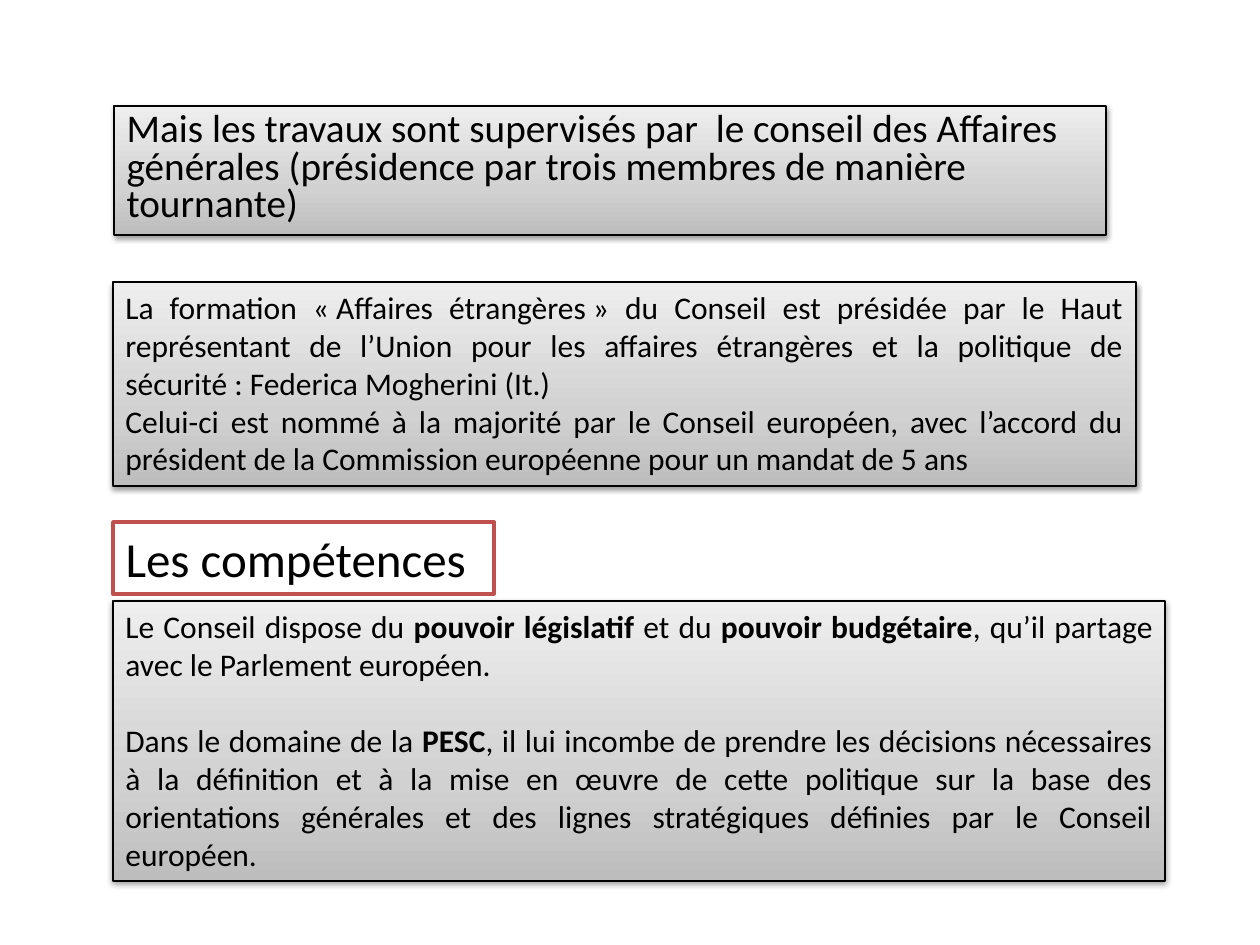
from dataclasses import dataclass

import lxml.etree
import pptx
import pptx.dml.color
import pptx.enum.shapes
import pptx.enum.text
import pptx.oxml.ns
import pptx.util

PX = 914400 / 126
RGB = pptx.dml.color.RGBColor.from_string
ALIGN = pptx.enum.text.PP_ALIGN
qn = pptx.oxml.ns.qn


@dataclass(frozen=True)
class Theme:
    font: str = "Calibri"
    ink: str = "000000"
    paper: str = "FFFFFF"
    accent: str = "C0504D"
    gradient: tuple = ((0, "BDBDBD"), (35, "D1D1D1"), (100, "EEEEEE"))
    lead_size: float = 22.4
    heading_size: float = 28
    text_size: float = 18


THEME = Theme()


@dataclass(frozen=True)
class Span:
    text: str
    bold: bool = False


@dataclass(frozen=True)
class Para:
    spans: tuple[Span, ...]
    space_before: float = 0


@dataclass(frozen=True)
class Box:
    left: int
    top: int
    width: int
    height: int
    paras: tuple[Para, ...]
    size: float
    align: ALIGN = ALIGN.JUSTIFY
    line_spacing: float = 1.0


LEAD = Box(114, 106, 992, 129, (
    Para((Span("Mais les travaux sont supervisés par  le conseil des Affaires générales "
               "(présidence par trois membres de manière tournante)"),)),
), THEME.lead_size, ALIGN.LEFT, 0.8)

HEADING = Box(113, 522, 381, 72, (Para((Span("Les compétences"),)),),
              THEME.heading_size, ALIGN.LEFT)

PANELS = (
    Box(113, 282, 1023, 204, (
        Para((Span("La formation «\u00a0Affaires étrangères\u00a0» du Conseil est présidée par le "
                   "Haut représentant de l’Union pour les affaires étrangères et la "
                   "politique de sécurité : Federica Mogherini (It.)"),)),
        Para((Span("Celui-ci est nommé à la majorité par le Conseil européen, avec "
                   "l’accord du président de la Commission européenne pour un mandat "
                   "de 5 ans"),)),
    ), THEME.text_size),
    Box(113, 601, 1052, 280, (
        Para((Span("Le Conseil dispose du "),
              Span("pouvoir législatif ", True),
              Span("et du "),
              Span("pouvoir budgétaire", True),
              Span(", qu’il partage avec le Parlement européen."))),
        Para((Span("Dans le domaine de la "),
              Span("PESC", True),
              Span(", il lui incombe de prendre les décisions nécessaires à la définition "
                   "et à la mise en œuvre de cette politique sur la base des orientations "
                   "générales et des lignes stratégiques définies par le Conseil européen.")),
             space_before=22),
    ), THEME.text_size),
)


def add_color(parent, color: str):
    return lxml.etree.SubElement(parent, qn("a:srgbClr"), val=color)


def style_panel(shape) -> None:
    """Give a shape the grey gradient, thin outline and soft shadow."""
    shape.fill.gradient()
    shape.fill.gradient_angle = 90
    properties = shape._element.spPr
    stops = properties.find(".//" + qn("a:gsLst"))
    for stop in list(stops):
        stops.remove(stop)
    for position, color in THEME.gradient:
        add_color(lxml.etree.SubElement(stops, qn("a:gs"), pos=str(position * 1000)), color)
    shape.line.color.rgb = RGB(THEME.ink)
    shape.line.width = pptx.util.Pt(0.75)

    shape.shadow.inherit = False
    shadow = lxml.etree.SubElement(
        properties.find(qn("a:effectLst")), qn("a:outerShdw"),
        blurRad="40000", dist="20000", dir="5400000", rotWithShape="0")
    lxml.etree.SubElement(add_color(shadow, THEME.ink), qn("a:alpha"), val="38000")


def style_heading(shape) -> None:
    shape.fill.solid()
    shape.fill.fore_color.rgb = RGB(THEME.paper)
    shape.line.color.rgb = RGB(THEME.accent)
    shape.line.width = pptx.util.Pt(2)


def place(shape, box: Box) -> None:
    shape.left, shape.top, shape.width, shape.height = (
        round(length * PX) for length in (box.left, box.top, box.width, box.height))


def write(shape, box: Box) -> None:
    frame = shape.text_frame
    frame.word_wrap = True
    frame.auto_size = pptx.enum.text.MSO_AUTO_SIZE.NONE
    frame.vertical_anchor = pptx.enum.text.MSO_ANCHOR.TOP
    for index, para in enumerate(box.paras):
        paragraph = frame.add_paragraph() if index else frame.paragraphs[0]
        paragraph.alignment = box.align
        paragraph.line_spacing = box.line_spacing
        paragraph.space_before = pptx.util.Pt(para.space_before)
        properties = paragraph._p.get_or_add_pPr()
        properties.set("marL", "0")
        properties.set("indent", "0")
        lxml.etree.SubElement(properties, qn("a:buNone"))
        for span in para.spans:
            run = paragraph.add_run()
            run.text = span.text
            run.font.name = THEME.font
            run.font.size = pptx.util.Pt(box.size)
            run.font.bold = span.bold
            run.font.color.rgb = RGB(THEME.ink)


def main() -> None:
    deck = pptx.Presentation()
    deck.slide_width = pptx.util.Inches(10)
    deck.slide_height = pptx.util.Inches(7.5)
    page = deck.slides.add_slide(deck.slide_layouts[1])

    heading = page.shapes.title
    place(heading, HEADING)
    style_heading(heading)
    write(heading, HEADING)

    lead = page.placeholders[1]
    place(lead, LEAD)
    style_panel(lead)
    write(lead, LEAD)

    for box in PANELS:
        panel = page.shapes.add_shape(pptx.enum.shapes.MSO_SHAPE.RECTANGLE, 0, 0, 0, 0)
        place(panel, box)
        style_panel(panel)
        write(panel, box)

    deck.save("out.pptx")


if __name__ == "__main__":
    main()
